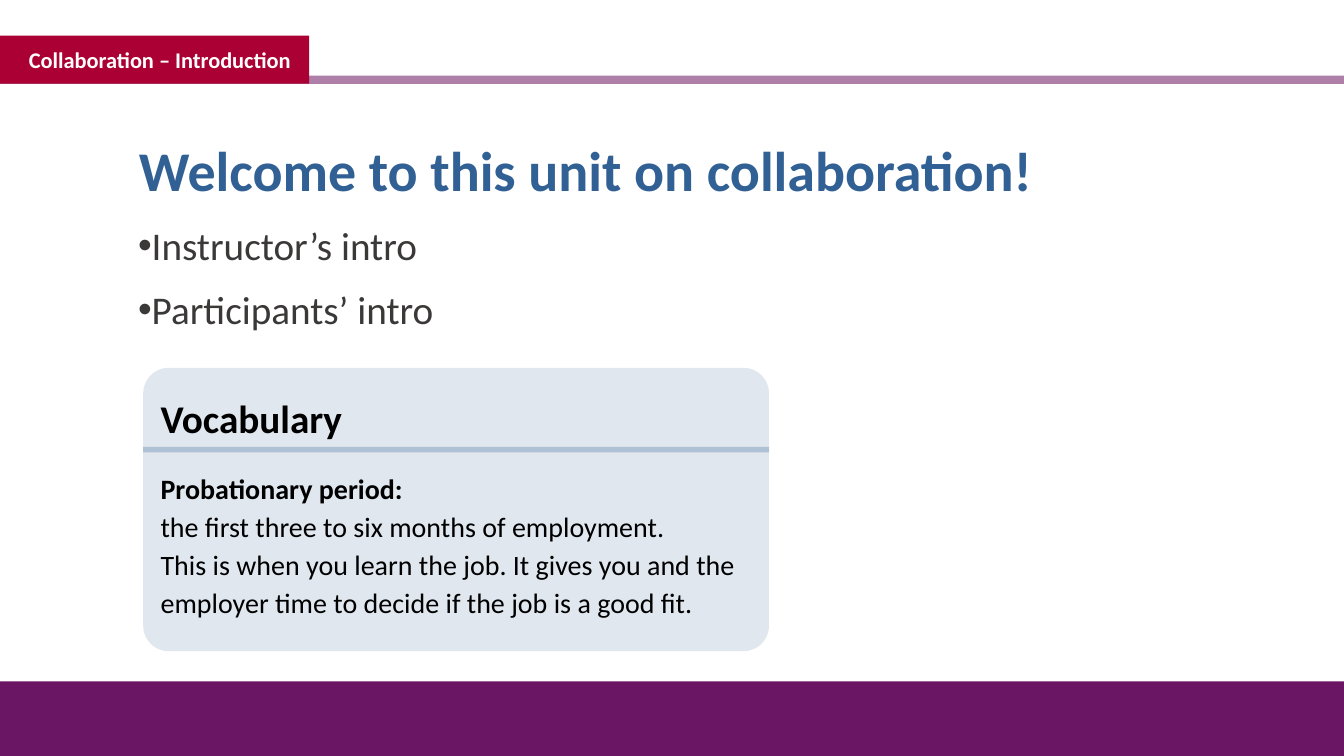
from lxml.etree import SubElement
from pptx import Presentation
from pptx.dml.color import RGBColor
from pptx.enum.shapes import MSO_CONNECTOR, MSO_SHAPE
from pptx.enum.text import MSO_ANCHOR, PP_ALIGN
from pptx.oxml.ns import qn
from pptx.util import Cm, Pt

TITLE = "Welcome to this unit on collaboration!"
SECTION = "Collaboration – Introduction"
INTROS = ["Instructor’s intro", "Participants’ intro"]
CARD_HEADING = "Vocabulary"
TERM = "Probationary period:"
DEFINITION = [
    "the first three to six months of employment.",
    "This is when you learn the job. It gives you and the employer time to decide if the job is a good fit.",
]

THEME = {
    "font": "Calibri",
    "blue": "316094", "purple": "6B1664", "red": "AB0033",
    "white": "FFFFFF", "gray": "3B3838", "black": "000000",
    "title": 40, "large": 28, "body": 20, "section": 16,
}
WIDTH, HEIGHT = 33.87, 19.05
FOOTER_HEIGHT = 1.88
CARD = (3.61, 9.27, 15.77, 7.14)

presentation = Presentation()
presentation.slide_width, presentation.slide_height = Cm(WIDTH), Cm(HEIGHT)
slide = presentation.slides.add_slide(presentation.slide_layouts[6])


def set_values(target, values):
    for name, value in values.items():
        setattr(target, name, value)


def paint(color_format, color, opacity):
    color_format.rgb = RGBColor.from_string(THEME[color])
    if opacity < 100:
        color_element = color_format._xFill.find(qn("a:srgbClr"))
        SubElement(color_element, qn("a:alpha"), val=str(opacity * 1000))


def add_panel(kind, box, color, opacity=100):
    shape = slide.shapes.add_shape(kind, *map(Cm, box))
    shape.shadow.inherit = False
    shape.fill.solid()
    paint(shape.fill.fore_color, color, opacity)
    shape.line.fill.background()
    set_values(shape.text_frame, {"word_wrap": True, "vertical_anchor": MSO_ANCHOR.TOP})
    return shape


def add_rule(left, right, top, color, weight, opacity):
    connector = slide.shapes.add_connector(
        MSO_CONNECTOR.STRAIGHT, Cm(left), Cm(top), Cm(right), Cm(top))
    connector.line.width = Pt(weight)
    connector.line.fill.solid()
    paint(connector.line.fill.fore_color, color, opacity)
    SubElement(connector._element.spPr, qn("a:effectLst"))


def add_text_box(box):
    text_frame = slide.shapes.add_textbox(*map(Cm, box)).text_frame
    text_frame.word_wrap = True
    return text_frame


def next_paragraph(text_frame, **spacing):
    first = text_frame.paragraphs[0]
    paragraph = text_frame.add_paragraph() if first.runs else first
    set_values(paragraph, {"alignment": PP_ALIGN.LEFT, **spacing})
    return paragraph


def add_run(paragraph, text, size, color, bold=False):
    run = paragraph.add_run()
    run.text = text
    set_values(run.font, {"name": THEME["font"], "size": Pt(THEME[size]), "bold": bold})
    run.font.color.rgb = RGBColor.from_string(THEME[color])


def indent(paragraph, margin, first_line, bullet=None):
    properties = paragraph._p.get_or_add_pPr()
    properties.set("marL", str(Cm(margin)))
    properties.set("indent", str(Cm(first_line)))
    if bullet:
        SubElement(properties, qn("a:buFont"), typeface="Arial")
        SubElement(properties, qn("a:buChar"), char=bullet)


title_frame = add_text_box((3.25, 3.28, 27.64, 1.96))
add_run(next_paragraph(title_frame), TITLE, "title", "blue", True)

add_panel(MSO_SHAPE.RECTANGLE, (0, HEIGHT - FOOTER_HEIGHT, WIDTH, FOOTER_HEIGHT), "purple")
add_rule(0, WIDTH, 2.01, "purple", 6, 55)

section_tab = add_panel(MSO_SHAPE.RECTANGLE, (0, 0.9, 7.79, 1.21), "red")
section_tab.text_frame.vertical_anchor = MSO_ANCHOR.MIDDLE
section_paragraph = next_paragraph(section_tab.text_frame)
indent(section_paragraph, 0.48, 0)
add_run(section_paragraph, SECTION, "section", "white", True)

intro_frame = add_text_box((3.23, 5.46, 15.14, 3.07))
for intro in INTROS:
    intro_paragraph = next_paragraph(intro_frame, space_after=Pt(12))
    indent(intro_paragraph, 0, -0.76, "•")
    add_run(intro_paragraph, intro, "large", "gray")

card = add_panel(MSO_SHAPE.ROUNDED_RECTANGLE, CARD, "blue", 15)
card.adjustments[0] = 0.09
set_values(card.text_frame, {
    "margin_left": Cm(0.25), "margin_right": Cm(0.25),
    "margin_top": Cm(0.31), "margin_bottom": Cm(0.1),
})
heading = next_paragraph(card.text_frame, line_spacing=1.15, space_after=Pt(18))
add_run(heading, CARD_HEADING, "large", "black", True)
entry = next_paragraph(card.text_frame, line_spacing=1.13)
add_run(entry, TERM, "body", "black", True)
for sentence in DEFINITION:
    entry.add_line_break()
    add_run(entry, sentence, "body", "black")

add_rule(CARD[0], CARD[0] + CARD[2], 11.33, "blue", 4, 27)

presentation.save("out.pptx")
